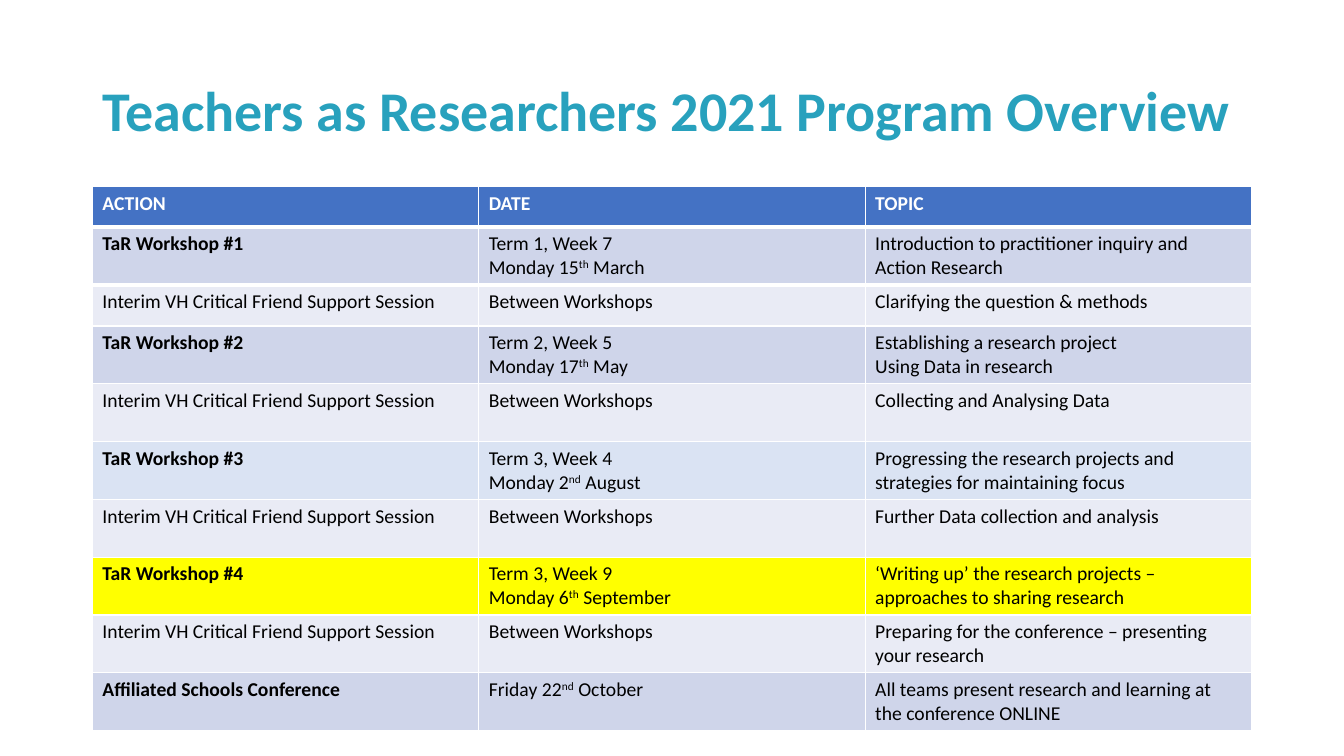
import pptx
import pptx.util
import pptx.dml.color
import pptx.enum.text
import pptx.oxml
import pptx.oxml.ns

Pt = pptx.util.Pt
RGBColor = pptx.dml.color.RGBColor

TEAL = RGBColor(0x28, 0xA1, 0xBD)
BLUE = RGBColor(0x44, 0x72, 0xC4)
BAND = RGBColor(0xCF, 0xD5, 0xEA)
PALE = RGBColor(0xE9, 0xEB, 0xF5)
SKY = RGBColor(0xDA, 0xE3, 0xF3)
YELLOW = RGBColor(0xFF, 0xFF, 0x00)
WHITE = RGBColor(0xFF, 0xFF, 0xFF)
BLACK = RGBColor(0x00, 0x00, 0x00)

TITLE = "Teachers as Researchers 2021 Program Overview"
HEADER = ("ACTION", "DATE", "TOPIC")
INTERIM = ("Interim VH Critical Friend Support Session", "Between Workshops")
SHORT, TALL = 29.2, 41.3

# (cells, fill, row height); a newline starts a paragraph, ^...^ is superscript
ROWS = [
    (HEADER, BLUE, SHORT),
    (("TaR Workshop #1", "Term 1, Week 7\nMonday 15^th^ March",
      "Introduction to practitioner inquiry and Action Research"), BAND, TALL),
    ((*INTERIM, "Clarifying the question & methods"), PALE, SHORT),
    (("TaR Workshop #2", "Term 2, Week 5\nMonday 17^th^ May",
      "Establishing a research project\nUsing Data in research"), BAND, TALL),
    ((*INTERIM, "Collecting and Analysing Data"), PALE, TALL),
    (("TaR Workshop #3", "Term 3, Week 4\nMonday 2^nd^ August",
      "Progressing the research projects and strategies for maintaining focus"), SKY, TALL),
    ((*INTERIM, "Further Data collection and analysis"), PALE, TALL),
    (("TaR Workshop #4", "Term 3, Week 9\nMonday 6^th^ September",
      "‘Writing up’ the research projects – approaches to sharing research"), YELLOW, TALL),
    ((*INTERIM, "Preparing for the conference – presenting your research"), PALE, TALL),
    (("Affiliated Schools Conference", "Friday 22^nd^ October",
      "All teams present research and learning at the conference ONLINE"), BAND, TALL),
]

LEFT, WIDTH = 66, 828
TITLE_TOP, TITLE_HEIGHT = 28.75, 104.4
TABLE_TOP = TITLE_TOP + TITLE_HEIGHT
HEADER_RULE = 3


def set_font(p, size, color, bold):
    p.font.name = "Calibri"
    p.font.size = Pt(size)
    p.font.bold = bold
    p.font.color.rgb = color


def add_title(slide):
    sp = slide.shapes.title
    sp.left, sp.top = Pt(LEFT), Pt(TITLE_TOP)
    sp.width, sp.height = Pt(WIDTH), Pt(TITLE_HEIGHT)
    tf = sp.text_frame
    tf.text = TITLE
    tf.vertical_anchor = pptx.enum.text.MSO_ANCHOR.MIDDLE
    tf.auto_size = pptx.enum.text.MSO_AUTO_SIZE.NONE
    p = tf.paragraphs[0]
    p.alignment = pptx.enum.text.PP_ALIGN.LEFT
    p.line_spacing = 0.9
    set_font(p, 40, TEAL, True)


def fill_cell(cell, text, fill, color, bold):
    cell.fill.solid()
    cell.fill.fore_color.rgb = fill
    tf = cell.text_frame
    for i, line in enumerate(text.split("\n")):
        p = tf.add_paragraph() if i else tf.paragraphs[0]
        set_font(p, 14, color, bold)
        for j, part in enumerate(line.split("^")):
            r = p.add_run()
            r.text = part
            if j % 2:
                r._r.get_or_add_rPr().set("baseline", "30000")


def add_rule(cell, side):
    """Draw the thick white header rule on one side (lnT or lnB) of a cell."""
    ln = pptx.oxml.parse_xml(
        f'<a:{side} {pptx.oxml.ns.nsdecls("a")} w="{Pt(HEADER_RULE)}">'
        f'<a:solidFill><a:srgbClr val="{WHITE}"/></a:solidFill></a:{side}>')
    cell._tc.get_or_add_tcPr().insert(0, ln)


def add_schedule(slide):
    height = sum(h for _, _, h in ROWS)
    table = slide.shapes.add_table(len(ROWS), len(HEADER), Pt(LEFT), Pt(TABLE_TOP),
                                   Pt(WIDTH), Pt(height)).table
    for column in table.columns:
        column.width = Pt(WIDTH / len(HEADER))
    for i, (texts, fill, row_height) in enumerate(ROWS):
        table.rows[i].height = Pt(row_height)
        for j, text in enumerate(texts):
            bold = i == 0 or (j == 0 and fill != PALE)
            fill_cell(table.cell(i, j), text, fill, BLACK if i else WHITE, bold)
    for j in range(len(HEADER)):
        add_rule(table.cell(0, j), "lnB")
        add_rule(table.cell(1, j), "lnT")


def main():
    prs = pptx.Presentation()
    prs.slide_width, prs.slide_height = Pt(960), Pt(540)
    slide = prs.slides.add_slide(prs.slide_layouts[5])
    add_title(slide)
    add_schedule(slide)
    prs.save("out.pptx")


if __name__ == "__main__":
    main()
